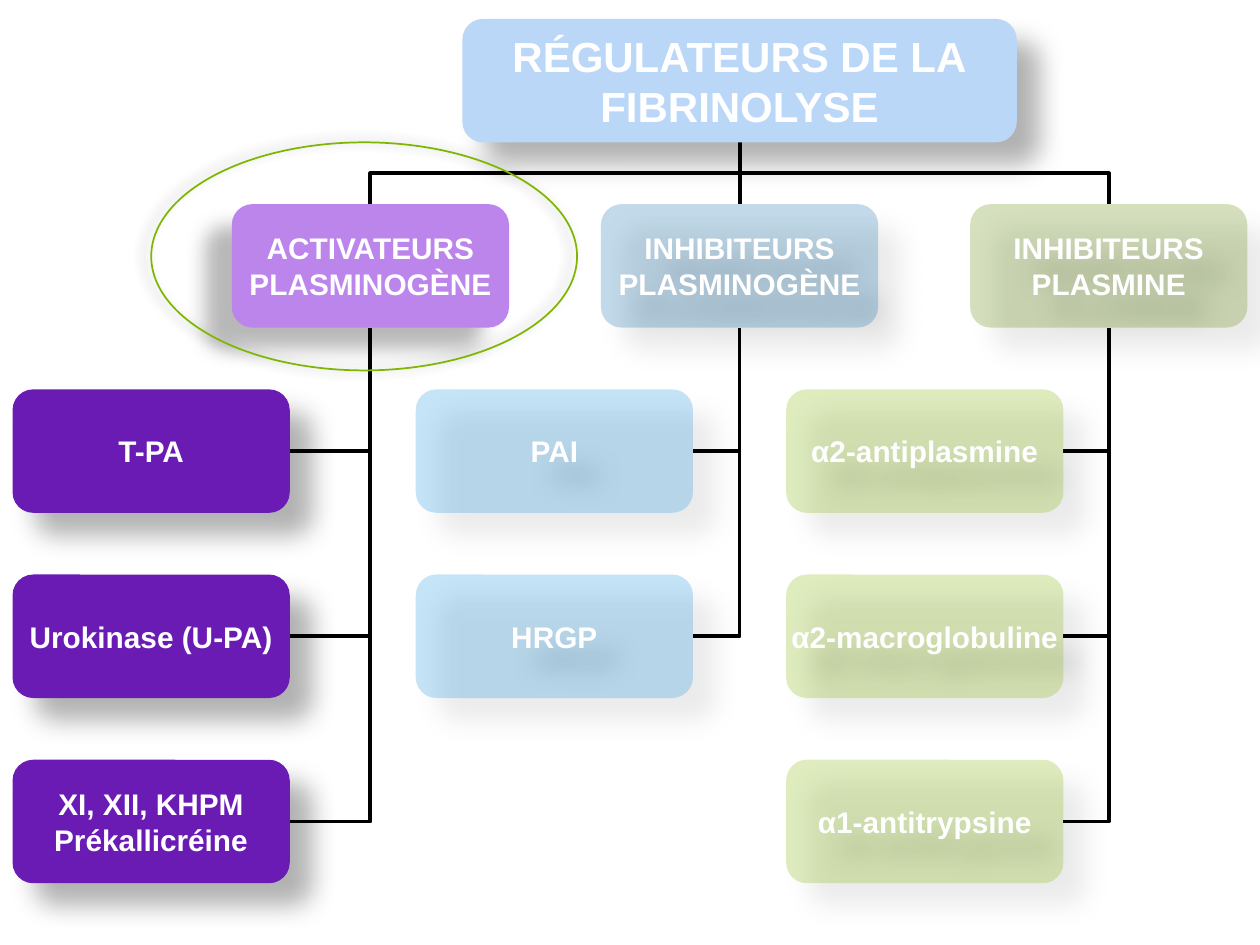
from typing import NamedTuple

from lxml.etree import SubElement
from pptx import Presentation
from pptx.dml.color import RGBColor
from pptx.enum.shapes import MSO_CONNECTOR, MSO_SHAPE
from pptx.enum.text import MSO_ANCHOR, PP_ALIGN
from pptx.oxml.ns import qn
from pptx.util import Inches, Pt

COLORS = {
    "black": "000000", "white": "FFFFFF", "title": "BBD7F8",
    "lilac": "BB85EC", "purple": "6A1BB4", "blue": "1772AD",
    "sky": "2397E2", "olive": "608805", "lime": "80B606", "ring": "7FB602",
}
FONT = "Arial"
WIDTH, HEIGHT = 2.2, 0.98
TOP, PITCH = 0.15, 1.47
MID, STEP = 5.87, 2.93
PALE = 26


class Shadow(NamedTuple):
    alpha: float
    blur: float
    dist: float
    angle: float


class Branch(NamedTuple):
    head: str
    color: str
    leaves: list[str]
    tint: str
    left: float
    alpha: int = 100
    shadow: Shadow = Shadow(30, 15, 18, 45)


BASE = Shadow(30, 15, 18, 45)
BRANCHES = [
    Branch("ACTIVATEURS\nPLASMINOGÈNE", "lilac",
           ["T-PA", "Urokinase (U-PA)", "XI, XII, KHPM\nPrékallicréine"],
           "purple", 0.1, shadow=Shadow(28, 11.8, 19.7, 141)),
    Branch("INHIBITEURS\nPLASMINOGÈNE", "blue", ["PAI", "HRGP"],
           "sky", 3.3, PALE),
    Branch("INHIBITEURS\nPLASMINE", "olive",
           ["α2-antiplasmine", "α2-macroglobuline", "α1-antitrypsine"],
           "lime", 6.24, PALE),
]


def rgb(name: str) -> RGBColor:
    return RGBColor.from_string(COLORS[name])


def row(index: int) -> float:
    """Top of a row of boxes."""
    return TOP + PITCH * index


def shade(shape, shadow: Shadow) -> None:
    shape.shadow.inherit = False
    effects = shape._element.spPr.find(qn("a:effectLst"))
    outer = SubElement(effects, qn("a:outerShdw"), {
        "blurRad": str(Pt(shadow.blur)), "dist": str(Pt(shadow.dist)),
        "dir": str(int(shadow.angle * 60000)),
        "algn": "ctr", "rotWithShape": "0"})
    color = SubElement(outer, qn("a:srgbClr"), val=COLORS["black"])
    SubElement(color, qn("a:alpha"), val=str(shadow.alpha * 1000))


def write(frame, text: str, *, size: float, color: str = "white",
          bold: bool = True) -> None:
    frame.word_wrap = False
    frame.vertical_anchor = MSO_ANCHOR.MIDDLE
    frame.margin_left = frame.margin_right = 0
    frame.margin_top = frame.margin_bottom = 0
    frame.text = text
    for para in frame.paragraphs:
        para.alignment = PP_ALIGN.CENTER
        font = para.runs[0].font
        font.name, font.size, font.bold = FONT, Pt(size), bold
        font.color.rgb = rgb(color)


def box(slide, text: str, left: float, top: float, color: str, *,
        width: float = WIDTH, size: float = 17, alpha: int = 100,
        shadow: Shadow = BASE) -> None:
    shape = slide.shapes.add_shape(
        MSO_SHAPE.ROUNDED_RECTANGLE, Inches(left), Inches(top),
        Inches(width), Inches(HEIGHT))
    shape.adjustments[0] = 0.167
    shape.fill.solid()
    shape.fill.fore_color.rgb = rgb(color)
    if alpha < 100:
        fill = shape._element.spPr.find(qn("a:solidFill"))
        SubElement(fill[0], qn("a:alpha"), val=str(alpha * 1000))
    shape.line.fill.background()
    shade(shape, shadow)
    write(shape.text_frame, text, size=size)


def link(slide, kind, x1: float, y1: float, x2: float, y2: float):
    line = slide.shapes.add_connector(
        kind, Inches(x1), Inches(y1), Inches(x2), Inches(y2))
    line.line.color.rgb = rgb("black")
    line.line.width = Pt(2.25)
    SubElement(line._element.spPr, qn("a:effectLst"))
    return line._element.spPr


def corner(slide, x1: float, y1: float, x2: float, y2: float) -> None:
    """Link with one bend, leaving sideways."""
    props = link(slide, MSO_CONNECTOR.ELBOW, x1, y1, x2, y2)
    props.find(qn("a:prstGeom")).set("prst", "bentConnector2")


def rise(slide, x1: float, y1: float, x2: float, y2: float) -> None:
    """Link with two bends, leaving upwards: a turned elbow."""
    side = 1 if x1 > x2 else -1
    mx, my = (x1 + x2) / 2, (y1 + y2) / 2
    dx, dy = side * (y1 - y2) / 2, abs(x1 - x2) / 2
    props = link(slide, MSO_CONNECTOR.ELBOW, mx - dx, my + dy, mx + dx, my - dy)
    angle = 270 if side > 0 else 90
    props.find(qn("a:xfrm")).set("rot", str(angle * 60000))


def ring(slide) -> None:
    oval = slide.shapes.add_shape(
        MSO_SHAPE.OVAL, Inches(1.2), Inches(1.13), Inches(3.38), Inches(1.81))
    oval.fill.background()
    oval.line.color.rgb = rgb("ring")
    oval.line.width = Pt(1)
    shade(oval, Shadow(35, 7, 4, 190))


def main() -> None:
    deck = Presentation()
    deck.slide_width, deck.slide_height = Inches(10), Inches(7.5)
    slide = deck.slides.add_slide(deck.slide_layouts[6])
    stems = [MID + STEP * (i - 1) for i in range(len(BRANCHES))]

    for stem, part in zip(stems, BRANCHES):
        for i in range(len(part.leaves)):
            corner(slide, part.left + WIDTH, row(i + 2) + HEIGHT / 2,
                   stem, row(1) + HEIGHT)
        ends = stem, row(1), MID, row(0) + HEIGHT
        if stem == MID:
            link(slide, MSO_CONNECTOR.STRAIGHT, *ends)
        else:
            rise(slide, *ends)

    box(slide, "RÉGULATEURS DE LA\nFIBRINOLYSE", MID - WIDTH, row(0), "title",
        width=2 * WIDTH, size=24)
    for stem, part in zip(stems, BRANCHES):
        box(slide, part.head, stem - WIDTH / 2, row(1), part.color,
            alpha=part.alpha, shadow=part.shadow)
        for i, leaf in enumerate(part.leaves):
            box(slide, leaf, part.left, row(i + 2), part.tint, alpha=part.alpha)
    ring(slide)
    deck.save("out.pptx")


if __name__ == "__main__":
    main()
